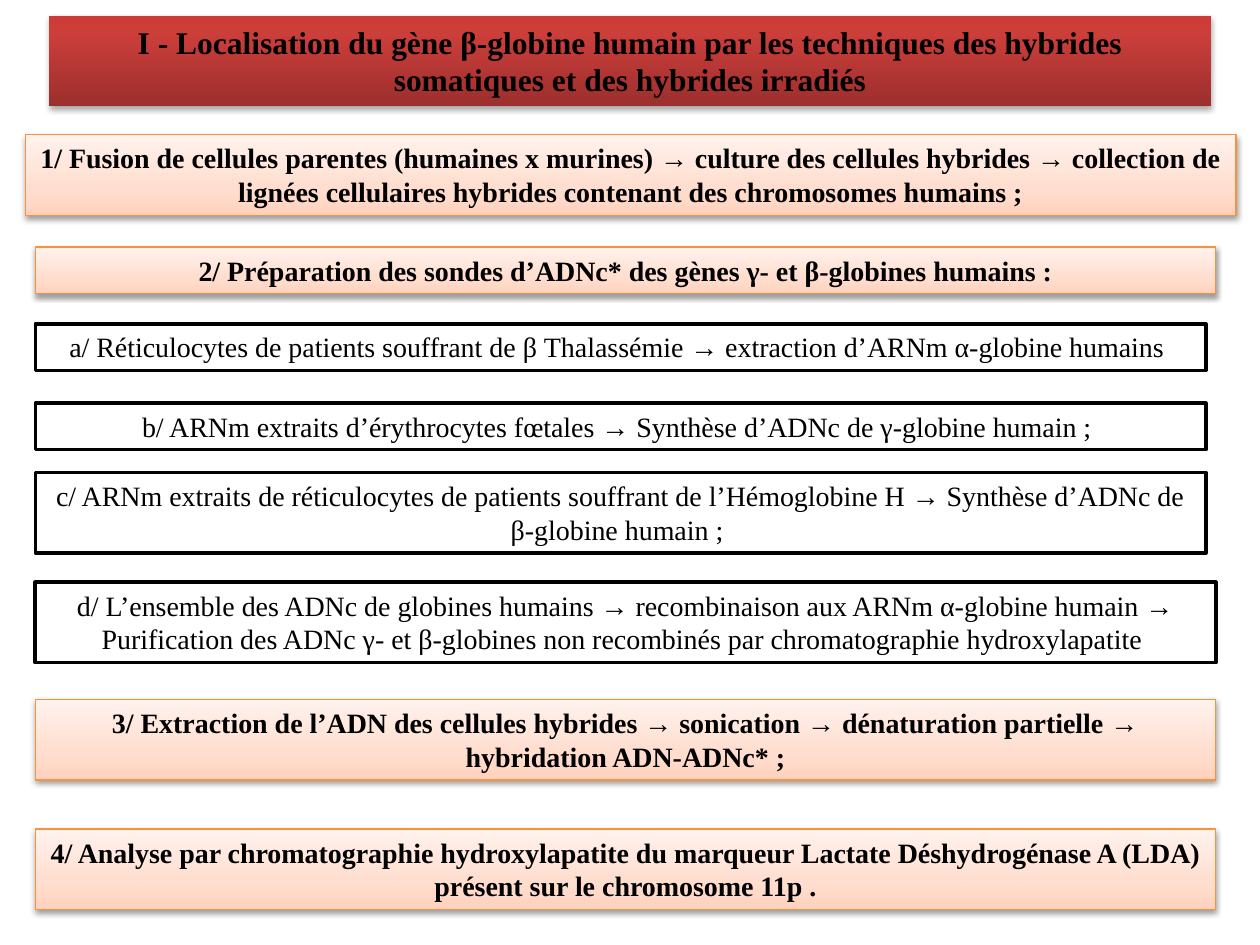
import copy

import pptx
import pptx.dml.color
import pptx.enum.shapes
import pptx.enum.text
import pptx.oxml
import pptx.oxml.ns
import pptx.util

Pt = pptx.util.Pt
FONT = "Times New Roman"
COLORS = {
    "text": "000000",
    "white": "FFFFFF",
    "black": "000000",
    "orange": "F69240",
}
RED_STOPS = [(0, "9C2F2D"), (0.8, "CB3E3A"), (1, "CE3B37")]
PEACH_STOPS = [(0, "FFD2BD"), (0.35, "FFDED0"), (1, "FFF2ED")]

LEFT = 20.16
WIDE, NARROW = 674.64, 668.88
ONE_LINE, TWO_LINES = 26.64, 46.08

TITLE = (
    "I - Localisation du gène β-globine humain par les techniques des "
    "hybrides somatiques et des hybrides irradiés"
)
# Each entry: left, top, width, height, text
STEPS = [
    (14.4, 77.04, 691.92, TWO_LINES,
     "1/ Fusion de cellules parentes (humaines x murines) → culture des cellules "
     "hybrides → collection de lignées cellulaires hybrides contenant des "
     "chromosomes humains ;"),
    (LEFT, 141.12, WIDE, ONE_LINE,
     "2/ Préparation des sondes d’ADNc* des gènes γ- et β-globines humains :"),
    (LEFT, 399.6, WIDE, TWO_LINES,
     "3/ Extraction de l’ADN des cellules hybrides → sonication → dénaturation "
     "partielle → hybridation ADN-ADNc* ;"),
    (LEFT, 473.76, WIDE, TWO_LINES,
     "4/ Analyse par chromatographie hydroxylapatite du marqueur Lactate "
     "Déshydrogénase A (LDA) présent sur le chromosome 11p ."),
]
SUBSTEPS = [
    (LEFT, 185.04, NARROW, ONE_LINE,
     "a/ Réticulocytes de patients souffrant de β Thalassémie → extraction "
     "d’ARNm α-globine humains "),
    (LEFT, 230.4, NARROW, ONE_LINE,
     "b/ ARNm extraits d’érythrocytes fœtales → Synthèse d’ADNc de γ-globine "
     "humain ; "),
    (LEFT, 270, NARROW, TWO_LINES,
     "c/ ARNm extraits de réticulocytes de patients souffrant de l’Hémoglobine H "
     "→ Synthèse d’ADNc de β-globine humain ; "),
    (LEFT, 332.64, WIDE, TWO_LINES,
     "d/ L’ensemble des ADNc de globines humains → recombinaison aux ARNm "
     "α-globine humain → Purification des ADNc γ- et β-globines non recombinés "
     "par chromatographie hydroxylapatite "),
]


def rgb(value):
    return pptx.dml.color.RGBColor.from_string(value)


def add_box(s, left, top, width, height, text, size=16, bold=False):
    """Add a rectangle with centred text, without shadow."""
    sp = s.shapes.add_shape(
        pptx.enum.shapes.MSO_SHAPE.RECTANGLE,
        Pt(left), Pt(top), Pt(width), Pt(height))
    sp.shadow.inherit = False
    tf = sp.text_frame
    tf.word_wrap = True
    tf.auto_size = pptx.enum.text.MSO_AUTO_SIZE.SHAPE_TO_FIT_TEXT
    tf.vertical_anchor = pptx.enum.text.MSO_ANCHOR.TOP
    p = tf.paragraphs[0]
    p.alignment = pptx.enum.text.PP_ALIGN.CENTER
    r = p.add_run()
    r.text = text
    r.font.name = FONT
    r.font.size = Pt(size)
    r.font.bold = bold
    r.font.color.rgb = rgb(COLORS["text"])
    return sp


def set_line(sp, color, width):
    sp.line.color.rgb = rgb(color)
    sp.line.width = Pt(width)


def set_gradient(sp, stops):
    """Fill from bottom to top with (position, colour) stops."""
    sp.fill.gradient()
    sp.fill.gradient_angle = 90
    gs_list = sp._element.spPr.find(".//" + pptx.oxml.ns.qn("a:gsLst"))
    while len(gs_list) < len(stops):
        gs_list.append(copy.deepcopy(gs_list[-1]))
    for stop, (position, color) in zip(sp.fill.gradient_stops, stops):
        stop.position = position
        stop.color.rgb = rgb(color)


def add_shadow(sp, distance, opacity):
    effects = sp._element.spPr.find(pptx.oxml.ns.qn("a:effectLst"))
    effects.append(pptx.oxml.parse_xml(
        f'<a:outerShdw {pptx.oxml.ns.nsdecls("a")} blurRad="{Pt(3.15)}" '
        f'dist="{Pt(distance)}" dir="5400000" rotWithShape="0">'
        f'<a:srgbClr val="{COLORS["black"]}"><a:alpha val="{opacity * 1000}"/>'
        '</a:srgbClr></a:outerShdw>'))


def add_title(s):
    sp = add_box(s, 28.08, 9.36, 663.84, 51.12, TITLE, size=18, bold=True)
    set_gradient(sp, RED_STOPS)
    sp.line.fill.background()
    add_shadow(sp, 1.8, 35)


def add_step(s, *box):
    sp = add_box(s, *box, bold=True)
    set_gradient(sp, PEACH_STOPS)
    set_line(sp, COLORS["orange"], 0.75)
    add_shadow(sp, 1.6, 38)


def add_substep(s, *box):
    sp = add_box(s, *box)
    sp.fill.solid()
    sp.fill.fore_color.rgb = rgb(COLORS["white"])
    set_line(sp, COLORS["black"], 2)


def main():
    prs = pptx.Presentation()
    prs.slide_width, prs.slide_height = Pt(720), Pt(540)
    s = prs.slides.add_slide(prs.slide_layouts[6])
    add_title(s)
    for step in STEPS:
        add_step(s, *step)
    for substep in SUBSTEPS:
        add_substep(s, *substep)
    prs.save("out.pptx")


if __name__ == "__main__":
    main()
